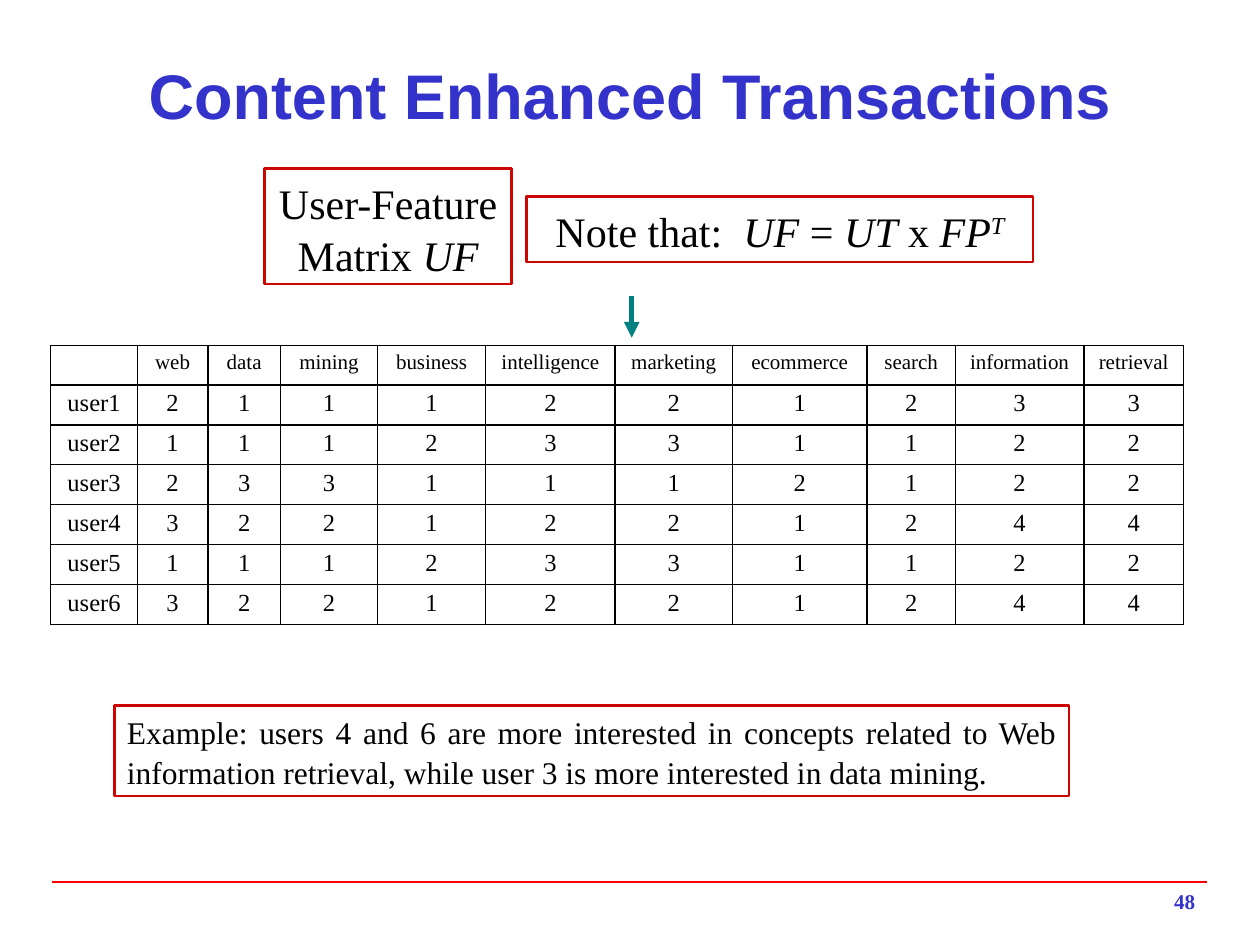
from lxml import etree
from pptx import Presentation
from pptx.dml.color import RGBColor
from pptx.enum.shapes import MSO_CONNECTOR, MSO_SHAPE
from pptx.enum.text import MSO_ANCHOR, PP_ALIGN
from pptx.oxml.ns import qn
from pptx.util import Pt

STRAIGHT = MSO_CONNECTOR.STRAIGHT
RECTANGLE = MSO_SHAPE.RECTANGLE
TOP, MIDDLE = MSO_ANCHOR.TOP, MSO_ANCHOR.MIDDLE
CENTER, RIGHT, JUSTIFY = PP_ALIGN.CENTER, PP_ALIGN.RIGHT, PP_ALIGN.JUSTIFY

COLORS = {
    "heading": "3333CC",
    "text": "000000",
    "frame": "CC0500",
    "arrow": "008080",
    "rule": "FF0000",
}
SERIF, SANS = "Times New Roman", "Arial"
TITLE_ONLY = 5

FEATURES = ["web", "data", "mining", "business", "intelligence", "marketing",
            "ecommerce", "search", "information", "retrieval"]
USER_COUNTS = [
    [2, 1, 1, 1, 2, 2, 1, 2, 3, 3],
    [1, 1, 1, 2, 3, 3, 1, 1, 2, 2],
    [2, 3, 3, 1, 1, 1, 2, 1, 2, 2],
    [3, 2, 2, 1, 2, 2, 1, 2, 4, 4],
    [1, 1, 1, 2, 3, 3, 1, 1, 2, 2],
    [3, 2, 2, 1, 2, 2, 1, 2, 4, 4],
]
COLUMN_WIDTHS = [49.5, 40.3, 41.5, 55.5, 61.8, 74, 67, 77, 50.4, 73.5, 57]


def color(key):
    return RGBColor.from_string(COLORS[key])


def format_font(font, size, key="text", name=SERIF, bold=False):
    font.size = Pt(size)
    font.name = name
    font.bold = bold
    font.color.rgb = color(key)


def place_title(slide, box):
    title = slide.shapes.title
    title.left, title.top, title.width, title.height = map(Pt, box)
    frame = title.text_frame
    frame.text = "Content Enhanced Transactions"
    frame.vertical_anchor = MIDDLE
    heading = frame.paragraphs[0]
    heading.alignment = CENTER
    format_font(heading.runs[0].font, 36, "heading", SANS, True)


def add_line(slide, start, end, key, width):
    line = slide.shapes.add_connector(STRAIGHT, *map(Pt, start + end))
    line.line.color.rgb = color(key)
    line.line.width = Pt(width)
    etree.SubElement(line._element.spPr, qn("a:effectLst"))
    return line


def add_arrow(slide, start, end):
    arrow = add_line(slide, start, end, "arrow", 3)
    etree.SubElement(arrow.line._get_or_add_ln(), qn("a:tailEnd"), type="triangle")


def add_footer(slide, box):
    left, top, width, height = box
    add_line(slide, (left, top), (left + width, top), "rule", 1)
    number_box = slide.shapes.add_textbox(*map(Pt, box))
    number_box.text_frame.word_wrap = True
    number = number_box.text_frame.paragraphs[0]
    number.text = "48"
    number.alignment = RIGHT
    format_font(number.runs[0].font, 12, "heading", bold=True)


def add_framed_note(slide, box, lines, size, alignment=CENTER, anchor=TOP, wrap=True):
    note = slide.shapes.add_shape(RECTANGLE, *map(Pt, box))
    note.shadow.inherit = False
    note.fill.background()
    note.line.color.rgb = color("frame")
    note.line.width = Pt(1.5)
    frame = note.text_frame
    frame.word_wrap = wrap
    frame.vertical_anchor = anchor
    for index, pieces in enumerate(lines):
        paragraph = frame.add_paragraph() if index else frame.paragraphs[0]
        paragraph.alignment = alignment
        paragraph.line_spacing = 1.05
        for text, style in pieces:
            run = paragraph.add_run()
            run.text = text
            format_font(run.font, size)
            run.font.italic = style != "plain"
            if style == "superscript":
                run._r.get_or_add_rPr().set("baseline", "30000")


def border_cell(cell):
    properties = cell._tc.get_or_add_tcPr()
    for position, side in enumerate(("a:lnL", "a:lnR", "a:lnT", "a:lnB")):
        border = etree.Element(qn(side), w=str(Pt(1)))
        fill = etree.SubElement(border, qn("a:solidFill"))
        etree.SubElement(fill, qn("a:srgbClr"), val=COLORS["text"])
        properties.insert(position, border)


def fill_cell(cell, text, size):
    cell.fill.background()
    cell.margin_left = cell.margin_right = Pt(3)
    cell.margin_top = cell.margin_bottom = Pt(3)
    cell.vertical_anchor = TOP
    border_cell(cell)
    paragraph = cell.text_frame.paragraphs[0]
    paragraph.alignment = CENTER
    if text:
        paragraph.text = text
        format_font(paragraph.runs[0].font, size)
    else:
        etree.SubElement(paragraph._p, qn("a:endParaRPr"), sz=str(size * 100))


def add_user_feature_matrix(slide, box):
    rows = [[""] + FEATURES]
    rows += [[f"user{number}"] + [str(count) for count in counts]
             for number, counts in enumerate(USER_COUNTS, 1)]
    matrix = slide.shapes.add_table(len(rows), len(rows[0]), *map(Pt, box)).table
    matrix.first_row = matrix.horz_banding = False
    for column, width in zip(matrix.columns, COLUMN_WIDTHS):
        column.width = Pt(width)
    for row_index, row in enumerate(rows):
        matrix.rows[row_index].height = Pt(box[3] / len(rows))
        for column_index, text in enumerate(row):
            fill_cell(matrix.cell(row_index, column_index), text, 14 if row_index else 12)


def build_slide(presentation):
    slide = presentation.slides.add_slide(presentation.slide_layouts[TITLE_ONLY])
    add_footer(slide, (30, 504, 660, 24))
    place_title(slide, (36, 30, 648, 48))
    add_user_feature_matrix(slide, (29, 197.3, 647.5, 158.9))
    add_framed_note(slide, (151.2, 96.2, 141.2, 66.2),
                    [[("User-Feature", "plain")],
                     [("Matrix ", "plain"), ("UF", "italic")]], 24, wrap=False)
    add_arrow(slide, (361, 169), (361, 193))
    add_framed_note(slide, (301, 112.3, 289.4, 37.4),
                    [[("Note that:  ", "plain"), ("UF", "italic"), (" = ", "plain"),
                      ("UT", "italic"), (" x ", "plain"), ("FP", "italic"),
                      ("T", "superscript")]], 24)
    add_framed_note(slide, (65.5, 403.2, 545.5, 51.8),
                    [[("Example: users 4 and 6 are more interested in concepts related "
                       "to Web information retrieval, while user 3 is more interested "
                       "in data mining.", "plain")]], 18, JUSTIFY, MIDDLE)


def main():
    presentation = Presentation()
    presentation.slide_width, presentation.slide_height = Pt(720), Pt(540)
    build_slide(presentation)
    presentation.save("out.pptx")


if __name__ == "__main__":
    main()
